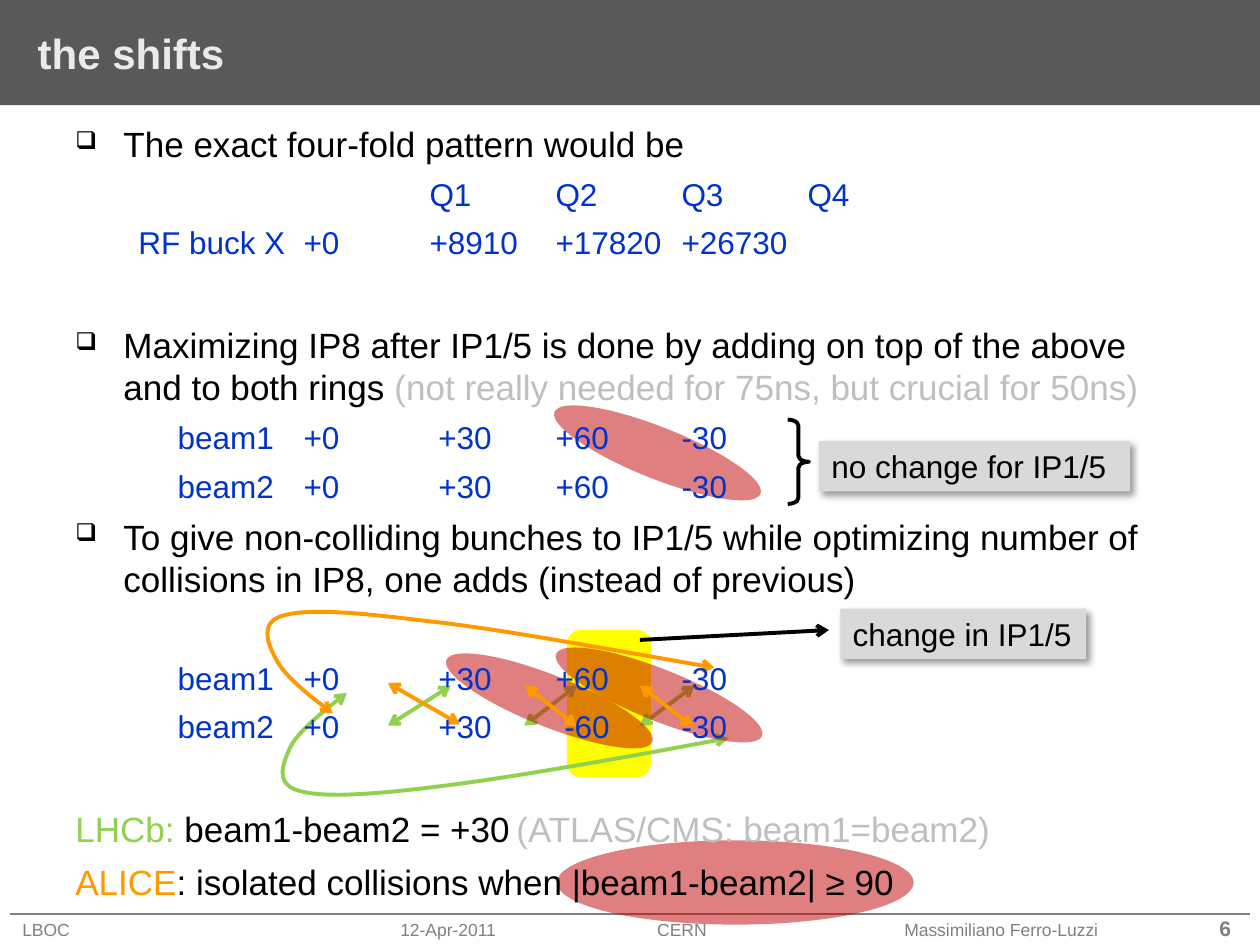
"""Build the slide about the bunch shifts of both beams."""
from lxml import etree
from pptx import Presentation
from pptx.dml.color import RGBColor
from pptx.enum.shapes import MSO_CONNECTOR as Link, MSO_SHAPE as Form
from pptx.enum.text import MSO_ANCHOR as Anchor, PP_ALIGN as Align
from pptx.oxml.ns import qn
from pptx.util import Cm, Pt

rgb = RGBColor.from_string
black, blue, green, orange = "000000", "0033CC", "92D050", "FF9900"
gray, pale, red = "808080", "BFBFBF", "C00000"

deck = Presentation()
deck.slide_width, deck.slide_height = Cm(25.4), Cm(19.05)
slide = deck.slides.add_slide(deck.slide_layouts[6])
shapes = slide.shapes


def write(para, text, size=18, hue=black, bold=False):
    run = para.add_run()
    run.text = text
    font = run.font
    font.name, font.size, font.bold = "Arial", Pt(size), bold
    font.color.rgb = rgb(hue)


def draw(hue, ties, bend=(), ends=("headEnd", "tailEnd"), width=2.25):
    items = [shapes.add_connector(Link.STRAIGHT, *map(Cm, tie)) for tie in ties]
    if bend:
        dots = []
        for i in range(0, len(bend) - 1, 3):
            for step in range(1, 13):
                t = step / 12
                parts = (1 - t) ** 3, 3 * t * (1 - t) ** 2, 3 * t * t * (1 - t), t ** 3
                dots.append([Cm(sum(w * dot[k] for w, dot in zip(parts, bend[i:i + 4])))
                             for k in (0, 1)])
        pen = shapes.build_freeform(*map(Cm, bend[0]))
        pen.add_line_segments(dots, close=False)
        curve = pen.convert_to_shape()
        curve.fill.background()
        items.append(curve)
    for item in items:
        item.line.color.rgb = rgb(hue)
        item.line.width = Pt(width)
        props = item._element.spPr
        for end in ends:
            etree.SubElement(props.find(qn("a:ln")), qn("a:" + end), type="arrow")
        etree.SubElement(props, qn("a:effectLst"))


draw(gray, [(0.2, 18.42, 25.2, 18.42)], ends=(), width=1)
foot = shapes.add_textbox(Cm(0.2), Cm(18.42), Cm(25.2), Cm(0.56)).text_frame
foot.word_wrap = True
foot.margin_top = foot.margin_bottom = Cm(0.03)
para = foot.paragraphs[0]
write(para, "LBOC\t12-Apr-2011\tCERN\tMassimiliano Ferro-Luzzi\t", size=10, hue=gray)
write(para, "6", size=12, hue=gray, bold=True)
tabs = etree.SubElement(para._p.get_or_add_pPr(), qn("a:tabLst"))
for stop in (7.62, 12.8, 17.78, 24.13):
    etree.SubElement(tabs, qn("a:tab"), pos=str(Cm(stop)), algn="l")

title = shapes.add_shape(Form.RECTANGLE, 0, 0, Cm(25.4), Cm(2.12))
title.shadow.inherit = False
title.fill.solid()
title.fill.fore_color.rgb = rgb("595959")
title.line.fill.background()
frame = title.text_frame
frame.margin_left = frame.margin_right = Cm(0.76)
frame.vertical_anchor = Anchor.MIDDLE
frame.paragraphs[0].alignment = Align.LEFT
write(frame.paragraphs[0], "the shifts", size=24, hue="EAEAEA", bold=True)

mark = shapes.add_shape(Form.ROUNDED_RECTANGLE, Cm(11.43), Cm(12.7), Cm(1.69), Cm(2.97))
mark.shadow.inherit = False
mark.fill.solid()
mark.fill.fore_color.rgb = rgb("FFFF00")
mark.line.fill.background()

draw(green,
     [(x, 14.63, end, 13.82) for x, end in ((7.82, 9.09), (10.57, 11.63), (12.9, 14))],
     [(14.68, 14.88), (12.5, 15.29), (10.34, 15.67), (8.89, 15.85), (7.44, 16.03),
      (6.53, 16.08), (6.05, 15.95), (5.54, 15.82), (5.69, 15.42), (5.84, 15.09),
      (5.99, 14.76), (6.5, 14.35), (6.99, 13.97)])

brace = shapes.add_shape(Form.RIGHT_BRACE, Cm(15.88), Cm(8.46), Cm(0.43), Cm(1.7))
brace.shadow.inherit = False
brace.adjustments[0] = 0.28
brace.fill.background()
brace.line.color.rgb = rgb(black)
brace.line.width = Pt(2.25)

for text, x, y, wide in (("no change for IP1/5", 16.51, 8.89, 6.27),
                         ("change in IP1/5", 16.94, 12.27, 4.95)):
    label = shapes.add_shape(Form.RECTANGLE, Cm(x), Cm(y), Cm(wide), Cm(1.02))
    label.shadow.inherit = False
    label.fill.solid()
    label.fill.fore_color.rgb = rgb("D9D9D9")
    label.line.fill.background()
    glow = etree.SubElement(label._element.spPr.find(qn("a:effectLst")), qn("a:outerShdw"),
                            blurRad=str(Pt(4)), dist=str(Pt(3)), dir="2700000",
                            algn="tl", rotWithShape="0")
    shade = etree.SubElement(glow, qn("a:srgbClr"), val=black)
    etree.SubElement(shade, qn("a:alpha"), val="40000")
    label.text_frame.word_wrap = False
    label.text_frame.paragraphs[0].alignment = Align.LEFT
    write(label.text_frame.paragraphs[0], text)

draw(black, [(12.9, 12.9, 16.71, 12.7)], ends=("tailEnd",))

for x, y, wide, high, turn in ((11.23, 16.94, 7.19, 1.7, 0), (11.02, 8.61, 4.47, 1.04, 21.7),
                               (11.05, 13.49, 4.47, 1.04, 21.7),
                               (8.84, 13.61, 4.47, 1.04, 21.7)):
    oval = shapes.add_shape(Form.OVAL, Cm(x), Cm(y), Cm(wide), Cm(high))
    oval.shadow.inherit = False
    oval.rotation = turn
    oval.fill.solid()
    oval.fill.fore_color.rgb = rgb(red)
    tint = oval._element.spPr.find(qn("a:solidFill"))[0]
    etree.SubElement(tint, qn("a:alpha"), val="50000")
    oval.line.fill.background()

draw(orange,
     [(9.27, 14.6, 7.82, 13.77), (11.63, 14.65, 10.59, 13.82), (13.97, 14.65, 12.9, 13.82)],
     [(14.4, 13.46), (12.22, 13.08), (10.03, 12.67), (8.61, 12.52), (7.16, 12.34),
      (6.25, 12.27), (5.74, 12.4), (5.23, 12.52), (5.38, 12.95), (5.56, 13.28),
      (5.72, 13.61), (6.2, 14), (6.71, 14.38)])

body = shapes.add_textbox(Cm(1.27), Cm(2.34), Cm(22.86), Cm(14.05)).text_frame
body.word_wrap = True
beam = "\tbeam{}\t+0\t +30\t{}\t-30"
styles = {"point": (20, 0.97, -0.97), "row": (18, 2.06, -0.79), "plain": (20, 0, 0)}
lines = [
    ("point", 6, [("The exact four-fold pattern would be", black)]),
    ("row", 6, [("\t\t\tQ1\tQ2\tQ3\tQ4", blue)]),
    ("row", 6, [("RF buck X\t+0\t+8910\t+17820\t+26730", blue)]),
    ("point", 36, [("Maximizing IP8 after IP1/5 is done by adding on top of the above "
                    "and to both rings ", black),
                   ("(not really needed for 75ns, but crucial for 50ns)", pale)]),
    ("row", 6, [(beam.format(1, "+60"), blue)]),
    ("row", 6, [(beam.format(2, "+60"), blue)]),
    ("point", 6, [("To give non-colliding bunches to IP1/5 while optimizing number of "
                   "collisions in IP8, one adds (instead of previous)", black)]),
    ("row", 34, [(beam.format(1, "+60"), blue)]),
    ("row", 6, [(beam.format(2, " -60"), blue)]),
    ("plain", 36, [("LHCb: ", green), ("beam1-beam2 = +30\t", black),
                   ("(ATLAS/CMS: beam1=beam2)", pale)]),
    ("plain", 6, [("ALICE", orange),
                  (": isolated collisions when |beam1-beam2| ≥ 90", black)]),
]
for i, (kind, gap, runs) in enumerate(lines):
    size, left, first = styles[kind]
    para = body.add_paragraph() if i else body.paragraphs[0]
    para.line_spacing, para.space_before = 1.0, Pt(gap)
    props = para._p.get_or_add_pPr()
    props.set("marL", str(Cm(left)))
    props.set("indent", str(Cm(first)))
    if kind == "plain":
        tabs = etree.SubElement(props, qn("a:tabLst"))
        etree.SubElement(tabs, qn("a:tab"), pos=str(Cm(11.91)), algn="l")
    else:
        props.set("defTabSz", str(Cm(2.54)))
    if kind == "point":
        etree.SubElement(props, qn("a:buSzPct"), val="70000")
        etree.SubElement(props, qn("a:buChar"), char="❑")
    for text, hue in runs:
        write(para, text, size=size, hue=hue)

deck.save("out.pptx")
